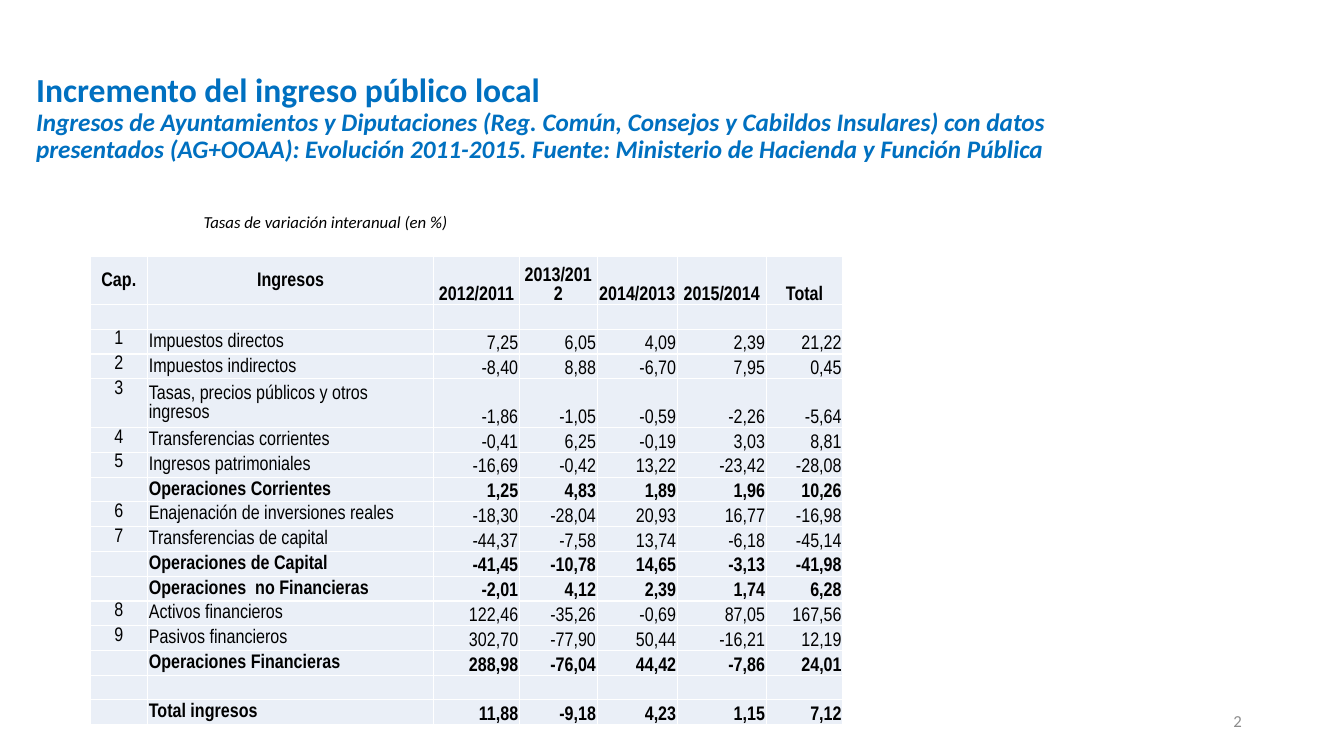
"""Slide with the yearly growth rates of local public income."""
from lxml import etree
from pptx import Presentation
from pptx.dml.color import RGBColor
from pptx.enum.text import MSO_ANCHOR as Anchor, PP_ALIGN as Align
from pptx.oxml import parse_xml
from pptx.oxml.ns import nsdecls, qn
from pptx.util import Cm, Pt


def rgb(color):
    return RGBColor.from_string(color)


def add_run(p, text, **fmt):
    r = p.add_run()
    r.text = text
    r.font.color.rgb = rgb(fmt.pop("color", "000000"))
    for name, value in fmt.items():
        setattr(r.font, name, value)


prs = Presentation()
prs.slide_width, prs.slide_height = Cm(33.87), Cm(19.05)
s = prs.slides.add_slide(prs.slide_layouts[6])

title = {"name": "Calibri", "color": "0070C0", "bold": True}
texts = [
    ((23.93, 17.65, 7.62, 1.02), Anchor.MIDDLE, Align.RIGHT, 1.0,
     [("2", {"name": "Calibri", "size": Pt(12), "color": "8C8C8C"})]),
    ((0.66, 1.65, 28.58, 2.67), Anchor.MIDDLE, Align.LEFT, 0.9,
     [("Incremento del ingreso público local", {**title, "size": Pt(24)}),
      ("Ingresos de Ayuntamientos y Diputaciones (Reg. Común, Consejos y Cabildos Insulares) "
       "con datos presentados (AG+OOAA): Evolución 2011-2015. "
       "Fuente: Ministerio de Hacienda y Función Pública",
       {**title, "size": Pt(18), "italic": True})]),
    ((4.88, 5.21, 6.76, 0.76), Anchor.TOP, Align.LEFT, 1.0,
     [("Tasas de variación interanual (en %)",
       {"name": "Calibri", "size": Pt(12), "italic": True})]),
]
for box, anchor, align, spacing, runs in texts:
    tf = s.shapes.add_textbox(*map(Cm, box)).text_frame
    tf.word_wrap = True
    tf.vertical_anchor = anchor
    p = tf.paragraphs[0]
    p.alignment, p.line_spacing = align, spacing
    for i, (text, fmt) in enumerate(runs):
        if i:
            p.add_line_break()
        add_run(p, text, **fmt)

rows = [
    ("Cap.", "Ingresos", "2012/2011", "2013/2012", "2014/2013", "2015/2014", "Total"),
    ("",) * 7,
    ("1", "Impuestos directos", "7,25", "6,05", "4,09", "2,39", "21,22"),
    ("2", "Impuestos indirectos", "-8,40", "8,88", "-6,70", "7,95", "0,45"),
    ("3", "Tasas, precios públicos y otros ingresos", "-1,86", "-1,05", "-0,59", "-2,26", "-5,64"),
    ("4", "Transferencias corrientes", "-0,41", "6,25", "-0,19", "3,03", "8,81"),
    ("5", "Ingresos patrimoniales", "-16,69", "-0,42", "13,22", "-23,42", "-28,08"),
    ("", "Operaciones Corrientes", "1,25", "4,83", "1,89", "1,96", "10,26"),
    ("6", "Enajenación de inversiones reales", "-18,30", "-28,04", "20,93", "16,77", "-16,98"),
    ("7", "Transferencias de capital", "-44,37", "-7,58", "13,74", "-6,18", "-45,14"),
    ("", "Operaciones de Capital", "-41,45", "-10,78", "14,65", "-3,13", "-41,98"),
    ("", "Operaciones  no Financieras", "-2,01", "4,12", "2,39", "1,74", "6,28"),
    ("8", "Activos financieros", "122,46", "-35,26", "-0,69", "87,05", "167,56"),
    ("9", "Pasivos financieros", "302,70", "-77,90", "50,44", "-16,21", "12,19"),
    ("", "Operaciones Financieras", "288,98", "-76,04", "44,42", "-7,86", "24,01"),
    ("",) * 7,
    ("", "Total ingresos", "11,88", "-9,18", "4,23", "1,15", "7,12"),
]
widths = [1.45, 7.21, 2.16, 1.96, 2.02, 2.24, 1.93]
heights = [1.21 if i == 0 else 1.23 if row[0] == "3" else 0.62 for i, row in enumerate(rows)]
aligns = [Align.CENTER, Align.LEFT] + [Align.RIGHT] * 5
anchors = [Anchor.TOP, Anchor.MIDDLE] + [Anchor.BOTTOM] * 5
margins = {"margin_left": Cm(0.03), "margin_right": Cm(0.03),
           "margin_top": Cm(0.03), "margin_bottom": Cm(0)}

table = s.shapes.add_table(len(rows), len(widths), Cm(2.27), Cm(6.46),
                           Cm(sum(widths)), Cm(sum(heights))).table
for column, width in zip(table.columns, widths):
    column.width = Cm(width)
for i, (row, height) in enumerate(zip(rows, heights)):
    table.rows[i].height = Cm(height)
    header = i == 0
    for j, text in enumerate(row):
        cell = table.cell(i, j)
        for name, value in margins.items():
            setattr(cell, name, value)
        cell.vertical_anchor = Anchor.MIDDLE if header and j == 0 else anchors[j]
        cell.fill.solid()
        cell.fill.fore_color.rgb = rgb("EAEFF7")
        tc_pr = cell._tc.get_or_add_tcPr()
        for k, side in enumerate("LRTB"):
            tc_pr.insert(k, parse_xml(
                f'<a:ln{side} {nsdecls("a")} w="12700"><a:solidFill>'
                f'<a:srgbClr val="FFFFFF"/></a:solidFill></a:ln{side}>'))
        p = cell.text_frame.paragraphs[0]
        p.alignment = Align.CENTER if header else aligns[j]
        if text:
            add_run(p, text, name="Arial Narrow", size=Pt(14), bold=header or not row[0])
        else:
            etree.SubElement(p._p, qn("a:endParaRPr"), sz="1200")

prs.save("out.pptx")
